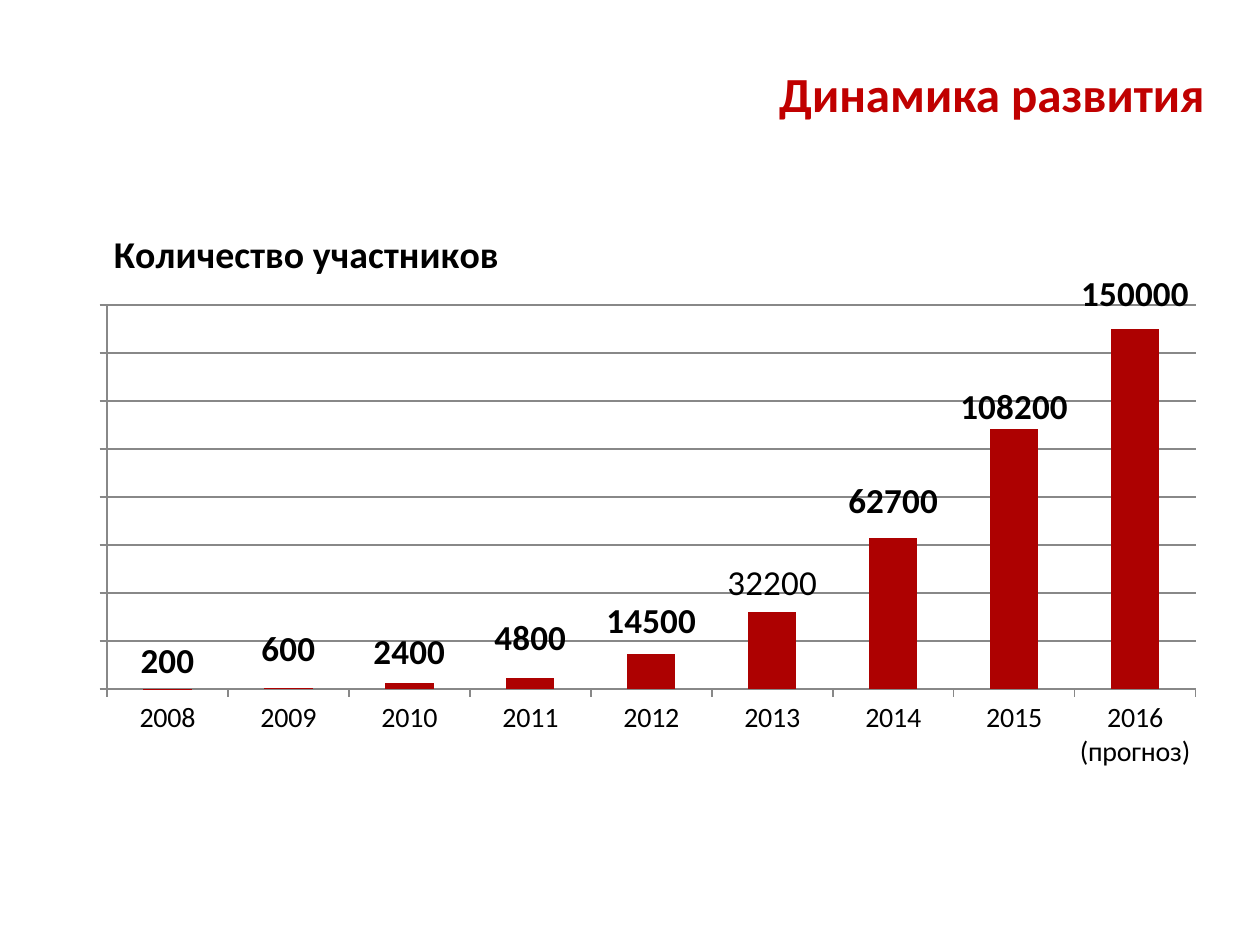
from lxml import etree
from pptx import Presentation
from pptx.chart.data import CategoryChartData
from pptx.dml.color import RGBColor
from pptx.enum.chart import XL_CHART_TYPE, XL_TICK_LABEL_POSITION, XL_TICK_MARK
from pptx.enum.text import MSO_ANCHOR, PP_ALIGN
from pptx.oxml.ns import qn
from pptx.util import Cm, Pt

STACKED = XL_CHART_TYPE.COLUMN_STACKED
OUTSIDE = XL_TICK_MARK.OUTSIDE
NO_TEXT = XL_TICK_LABEL_POSITION.NONE
MIDDLE = MSO_ANCHOR.MIDDLE
RIGHT = PP_ALIGN.RIGHT

FONT = "Calibri"
COLORS = {"title": "C00000", "bar": "AD0101", "text": "000000", "line": "888888"}
TITLE = "Динамика развития"
HEAD = "Количество участников"
# year, people, label shift as a share of the chart height, typed label
DATA = [
    ("2008", 200, -0.05, None),
    ("2009", 600, -0.07, None),
    ("2010", 2400, -0.06, None),
    ("2011", 4800, -0.08, None),
    ("2012", 14500, -0.09, None),
    ("2013", 32000, -0.12, "32200"),
    ("2014", 62700, -0.2, None),
    ("2015", 108200, -0.27, "108200"),
    ("2016\n(прогноз)", 150000, -0.38, None),
]
PLAIN = "2013"


def style(font, size, bold=False, color="text"):
    font.name = FONT
    font.size = Pt(size)
    font.bold = bold
    font.color.rgb = RGBColor.from_string(COLORS[color])


def add_run(frame, text, size, bold=True, color="text"):
    run = frame.paragraphs[0].add_run()
    run.text = text
    style(run.font, size, bold, color)


def set_layout(parent, after, **parts):
    """Give a chart part a manual layout, placed right after a child element."""
    for old in parent.findall(qn("c:layout")):
        parent.remove(old)
    layout = etree.Element(qn("c:layout"))
    manual = etree.SubElement(layout, qn("c:manualLayout"))
    for tag, val in parts.items():
        etree.SubElement(manual, qn("c:" + tag)).set("val", str(val))
    if after:
        parent.find(qn(after)).addnext(layout)
    else:
        parent.insert(0, layout)


def add_title(slide):
    box = slide.shapes.add_textbox(Cm(10.31), Cm(0.91), Cm(14.22), Cm(2.16))
    frame = box.text_frame
    frame.word_wrap = True
    frame.vertical_anchor = MIDDLE
    frame.paragraphs[0].alignment = RIGHT
    frame.paragraphs[0].line_spacing = 0.8
    add_run(frame, TITLE, 28, color="title")


def style_axes(chart):
    years, count = chart.category_axis, chart.value_axis
    count.minimum_scale, count.maximum_scale, count.major_unit = 0, 160000, 20000
    count.has_major_gridlines = True
    count.tick_label_position = NO_TEXT
    style(years.tick_labels.font, 16)
    for axis in (years, count):
        axis.major_tick_mark = OUTSIDE
    for line in (years.format.line, count.format.line, count.major_gridlines.format.line):
        line.color.rgb = RGBColor.from_string(COLORS["line"])
        line.width = Pt(1)


def add_labels(bars):
    labels = bars.data_labels
    labels.show_value = True
    style(labels.font, 20, True)
    for i, (year, _, _, text) in enumerate(DATA):
        label = bars.points[i].data_label
        bold = year != PLAIN
        if text:
            add_run(label.text_frame, text, 20, bold)
        else:
            style(label.font, 20, bold)
    for node, row in zip(bars._element.iter(qn("c:dLbl")), DATA):
        set_layout(node, "c:idx", x=0, y=row[2])
    for node in bars._element.iter(qn("c:showLeaderLines")):
        node.set("val", "0")


def add_chart(slide):
    data = CategoryChartData()
    data.categories = [row[0] for row in DATA]
    data.add_series("Series 1", [row[1] for row in DATA])
    chart = slide.shapes.add_chart(
        STACKED, Cm(1.7), Cm(4.32), Cm(22.86), Cm(11.4), data).chart
    style(chart.font, 18)
    chart.has_legend = False
    chart.has_title = True
    add_run(chart.chart_title.text_frame, HEAD, 21.6)
    root = chart._chartSpace
    set_layout(root.find(".//" + qn("c:title")), "c:tx",
               xMode="edge", yMode="edge", x=0.02, y=0.01)
    set_layout(root.find(".//" + qn("c:plotArea")), None, layoutTarget="inner",
               xMode="edge", yMode="edge", x=0.02, y=0.16, w=0.96, h=0.68)
    style_axes(chart)
    plot = chart.plots[0]
    plot.gap_width, plot.overlap, plot.vary_by_categories = 150, 100, False
    bars = plot.series[0]
    bars.format.fill.solid()
    bars.format.fill.fore_color.rgb = RGBColor.from_string(COLORS["bar"])
    add_labels(bars)


def main():
    deck = Presentation()
    deck.slide_width, deck.slide_height = Cm(25.4), Cm(19.05)
    slide = deck.slides.add_slide(deck.slide_layouts[6])
    add_title(slide)
    add_chart(slide)
    deck.save("out.pptx")


if __name__ == "__main__":
    main()
